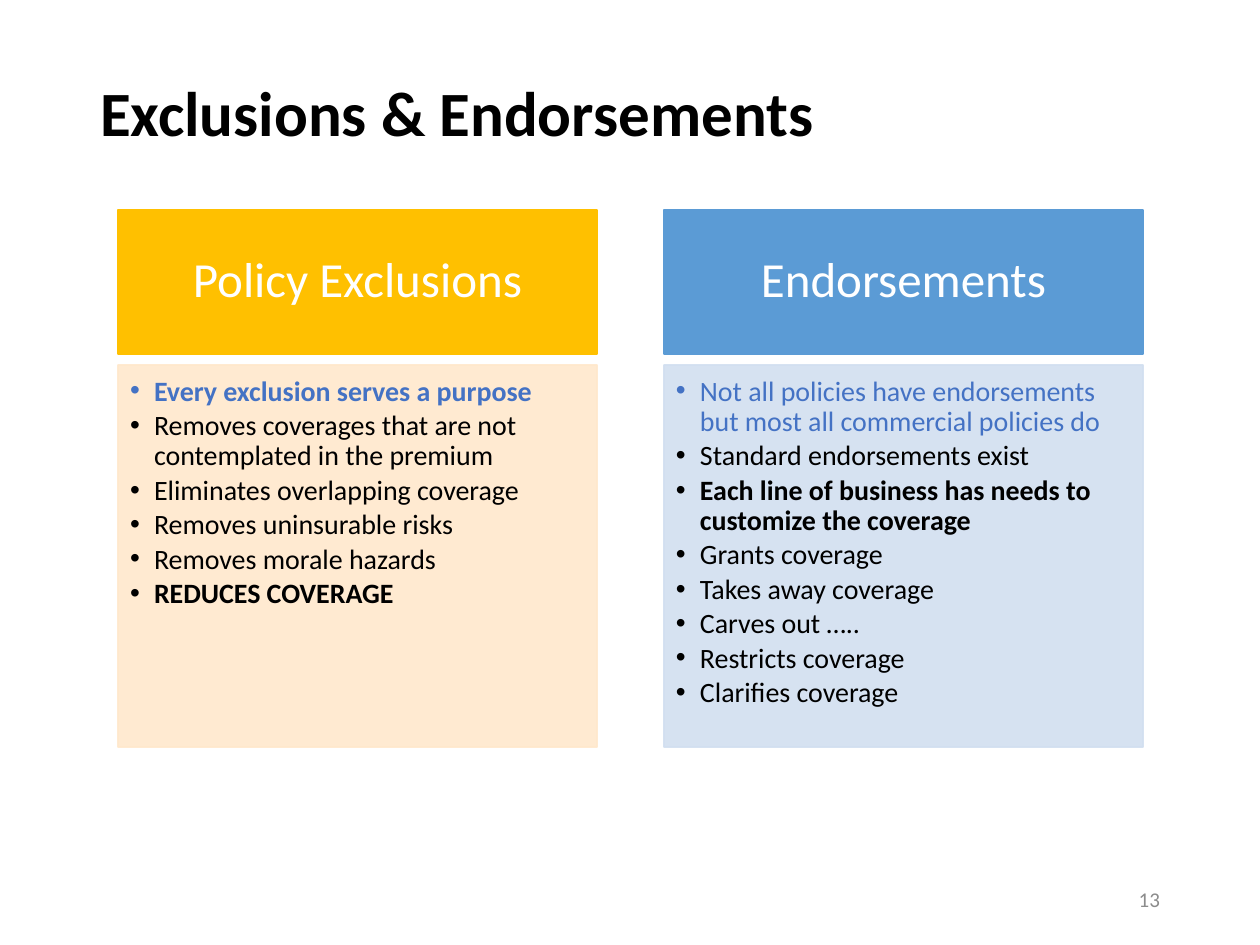
import pptx
import pptx.util
import pptx.dml.color
import pptx.enum.text
import pptx.oxml
import pptx.oxml.ns

PX = 914400 / 126
INK = {"black": "000000", "white": "FFFFFF", "blue": "4472C4", "gray": "8C8C8C",
       "gold": "FFC000", "sky": "5B9BD5", "cream": "FFE8CC", "pale": "D2DFF0"}
TEXT = pptx.enum.text
qn = pptx.oxml.ns.qn


def place(box, area, pad, anchor):
    box.left, box.top, box.width, box.height = [round(n * PX) for n in area]
    frame = box.text_frame
    frame.word_wrap = True
    frame.auto_size = TEXT.MSO_AUTO_SIZE.NONE
    frame.vertical_anchor = anchor
    (frame.margin_left, frame.margin_top,
     frame.margin_right, frame.margin_bottom) = [round(n * PX) for n in pad]
    return frame


def style(para, size, color, bold=False, align=TEXT.PP_ALIGN.LEFT, after=0):
    para.alignment = align
    para.line_spacing = 0.9
    para.space_before = pptx.util.Pt(0)
    para.space_after = pptx.util.Pt(after)
    font = para.font
    font.name = "Calibri"
    font.size = pptx.util.Pt(size)
    font.bold = bold
    font.color.rgb = pptx.dml.color.RGBColor.from_string(INK[color])


deck = pptx.Presentation()
deck.slide_width = pptx.util.Inches(10)
deck.slide_height = pptx.util.Inches(7.5)
slide = deck.slides.add_slide(deck.slide_layouts[4])
holders = {h.placeholder_format.idx: h for h in slide.placeholders}
middle = TEXT.MSO_ANCHOR.MIDDLE

# Title
frame = place(holders[0], (87, 50, 1086, 132), (13, 6, 13, 6), middle)
frame.text = "Exclusions & Endorsements"
style(frame.paragraphs[0], 36, "black", True)

# Two columns: heading, its colour, list colour, items (text, colour, bold)
columns = [
    ("Policy Exclusions", "gold", "cream", [
        ("Every exclusion serves a purpose", "blue", True),
        ("Removes coverages that are not contemplated in the premium", "black", False),
        ("Eliminates overlapping coverage", "black", False),
        ("Removes uninsurable risks", "black", False),
        ("Removes morale hazards", "black", False),
        ("REDUCES COVERAGE", "black", True)]),
    ("Endorsements", "sky", "pale", [
        ("Not all policies have endorsements but most all commercial policies do",
         "blue", False),
        ("Standard endorsements exist", "black", False),
        ("Each line of business has needs to customize the coverage", "black", True),
        ("Grants coverage", "black", False),
        ("Takes away coverage", "black", False),
        ("Carves out …..", "black", False),
        ("Restricts coverage", "black", False),
        ("Clarifies coverage", "black", False)]),
]
for col, (head, dark, light, items) in enumerate(columns):
    left = 118 + 546 * col
    top, body = holders[1 + 2 * col], holders[2 + 2 * col]

    # Heading
    frame = place(top, (left, 210, 479, 144), (28, 15, 28, 15), middle)
    frame.text = head
    style(frame.paragraphs[0], 28, "white", align=TEXT.PP_ALIGN.CENTER)

    # Bulleted list
    frame = place(body, (left, 365, 479, 382), (12, 12, 15, 18), TEXT.MSO_ANCHOR.TOP)
    for row, (words, color, bold) in enumerate(items):
        para = frame.paragraphs[0] if row == 0 else frame.add_paragraph()
        para.text = words
        props = para._p.get_or_add_pPr()
        props.set("marL", str(round(24 * PX)))
        props.set("indent", str(round(-24 * PX)))
        pptx.oxml.parse_xml(
            '<a:pPr xmlns:a="http://schemas.openxmlformats.org/drawingml/2006/main"/>')
        bullet = props.makeelement(qn("a:buChar"), {"char": "•"})
        props.append(bullet)
        style(para, 16, color, bold, after=2.4)

    # Fills and borders, the list panel slightly see-through
    for box, color in ((top, dark), (body, light)):
        tint = pptx.dml.color.RGBColor.from_string(INK[color])
        box.fill.solid()
        box.fill.fore_color.rgb = tint
        box.line.color.rgb = tint
        box.line.width = pptx.util.Pt(1)
    for tone in body._element.spPr.iter(qn("a:srgbClr")):
        tone.append(tone.makeelement(qn("a:alpha"), {"val": "90000"}))

# Slide number
box = slide.shapes.add_textbox(0, 0, 0, 0)
frame = place(box, (890, 876, 283, 50), (13, 6, 13, 6), middle)
frame.text = "13"
style(frame.paragraphs[0], 12, "gray", align=TEXT.PP_ALIGN.RIGHT)

deck.save("out.pptx")
